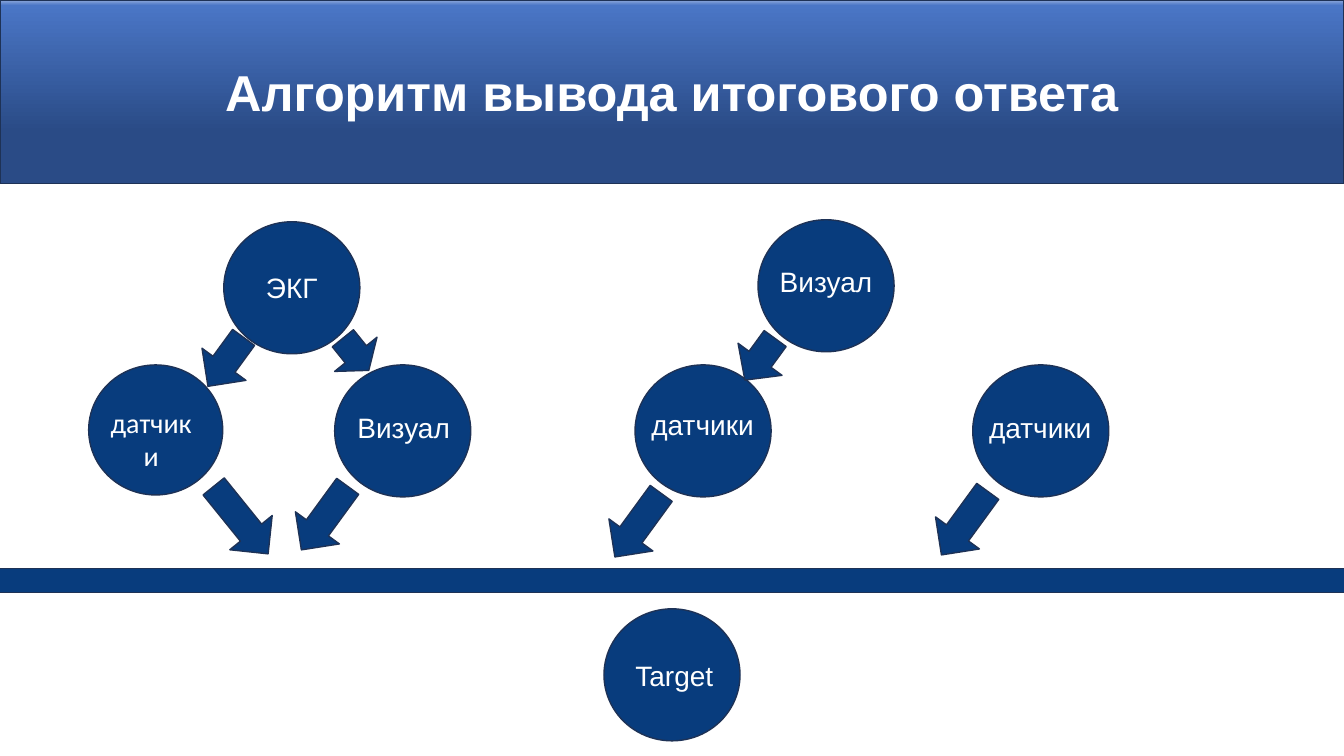
from dataclasses import dataclass

from lxml.etree import SubElement
from pptx import Presentation
from pptx.dml.color import RGBColor
from pptx.enum.shapes import MSO_SHAPE
from pptx.enum.text import MSO_ANCHOR, MSO_AUTO_SIZE, PP_ALIGN
from pptx.oxml.ns import qn
from pptx.shapes.autoshape import Shape
from pptx.slide import Slide
from pptx.util import Emu, Inches, Pt

COLORS = {"node": "083C7D", "outline": "1E3256", "text": "FFFFFF"}
TITLE_STOPS = {28: "2A4B86", 97: "4A76C6", 100: "8FAADC"}

# The slide is a grid of 80 columns by 45 rows of square cells.
COLUMNS, ROWS = 80, 45
CELL = Inches(1) / 6
LABEL_HEIGHT = 2.64
ARROW_WIDTH = 3.24
TO_LEFT, TO_RIGHT = 36.1, 321.1


@dataclass
class Area:
    left: float
    top: float
    width: float
    height: float

    def lengths(self) -> list[Emu]:
        return [cells(n) for n in (self.left, self.top, self.width, self.height)]


@dataclass
class Node:
    left: float
    top: float
    width: float = 8.1
    height: float = 7.86
    inner_text: str = ""


@dataclass
class Label:
    text: str
    left: float
    top: float
    width: float
    font: str = "Arial"


@dataclass
class Arrow:
    left: float
    top: float
    length: float
    rotation: float = TO_LEFT


NODES = [
    Node(5.28, 21.72, 7.98, 7.74),
    Node(13.32, 13.2, inner_text="ЭКГ"),
    Node(19.92, 21.72),
    Node(45.12, 13.08),
    Node(37.8, 21.72),
    Node(57.9, 21.72),
    Node(35.95, 36.24),
]
ARROWS = [
    Arrow(17.7, 28.5, 4.68),
    Arrow(12.72, 28.38, 5.16, TO_RIGHT),
    Arrow(36.36, 28.92, 4.68),
    Arrow(43.62, 19.86, 3.06),
    Arrow(55.8, 28.8, 4.68),
    Arrow(11.82, 19.74, 3.6),
    Arrow(19.56, 19.86, 2.46, TO_RIGHT),
]
LABELS = [
    Label("датчики", 5.58, 23.82, 6.84, "Calibri"),
    Label("Target", 37.2, 38.88, 5.88),
    Label("Визуал", 20.64, 24.12, 6.78),
    Label("Визуал", 45.78, 15.48, 6.78),
    Label("датчики", 38.16, 23.94, 7.32),
    Label("датчики", 58.26, 24.12, 7.32),
]


def cells(count: float) -> Emu:
    return Emu(round(count * CELL))


def set_text(shape: Shape, text: str, size: float, font: str = "Arial",
             bold: bool = False) -> None:
    shape.text_frame.text = text
    para = shape.text_frame.paragraphs[0]
    para.alignment = PP_ALIGN.CENTER
    para.font.name = font
    para.font.size = Pt(size)
    para.font.bold = bold
    para.font.color.rgb = RGBColor.from_string(COLORS["text"])


def set_outline(shape: Shape) -> None:
    shape.line.color.rgb = RGBColor.from_string(COLORS["outline"])
    shape.line.width = Pt(1)


def add_solid(page: Slide, kind: MSO_SHAPE, area: Area) -> Shape:
    shape = page.shapes.add_shape(kind, *area.lengths())
    shape.shadow.inherit = False
    shape.fill.solid()
    shape.fill.fore_color.rgb = RGBColor.from_string(COLORS["node"])
    set_outline(shape)
    return shape


def format_title(page: Slide) -> None:
    title = page.shapes.title
    title.left, title.top, title.width, title.height = Area(0, 0, COLUMNS, 10.92).lengths()
    title.fill.gradient()
    title.fill.gradient_angle = 90
    stops = title.element.spPr.find(qn("a:gradFill")).find(qn("a:gsLst"))
    for stop in list(stops):
        stops.remove(stop)
    for percent, color in TITLE_STOPS.items():
        stop = SubElement(stops, qn("a:gs"), pos=str(percent * 1000))
        SubElement(stop, qn("a:srgbClr"), val=color)
    set_outline(title)
    set_text(title, "Алгоритм вывода итогового ответа", 36, bold=True)
    title.text_frame.auto_size = MSO_AUTO_SIZE.NONE
    title.text_frame.vertical_anchor = MSO_ANCHOR.MIDDLE


def add_node(page: Slide, node: Node) -> None:
    circle = add_solid(page, MSO_SHAPE.OVAL,
                       Area(node.left, node.top, node.width, node.height))
    if node.inner_text:
        set_text(circle, node.inner_text, 20)
        circle.text_frame.vertical_anchor = MSO_ANCHOR.MIDDLE


def add_arrow(page: Slide, arrow: Arrow) -> None:
    shape = add_solid(page, MSO_SHAPE.DOWN_ARROW,
                      Area(arrow.left, arrow.top, ARROW_WIDTH, arrow.length))
    shape.rotation = arrow.rotation


def add_label(page: Slide, label: Label) -> None:
    area = Area(label.left, label.top, label.width, LABEL_HEIGHT)
    box = page.shapes.add_textbox(*area.lengths())
    box.text_frame.word_wrap = False
    set_text(box, label.text, 20, label.font)


def main() -> None:
    deck = Presentation()
    deck.slide_width, deck.slide_height = cells(COLUMNS), cells(ROWS)
    page = deck.slides.add_slide(deck.slide_layouts[5])
    format_title(page)
    add_solid(page, MSO_SHAPE.RECTANGLE, Area(-0.9, 33.84, 81.84, 1.44))
    for node in NODES:
        add_node(page, node)
    for arrow in ARROWS:
        add_arrow(page, arrow)
    for label in LABELS:
        add_label(page, label)
    deck.save("out.pptx")


if __name__ == "__main__":
    main()
